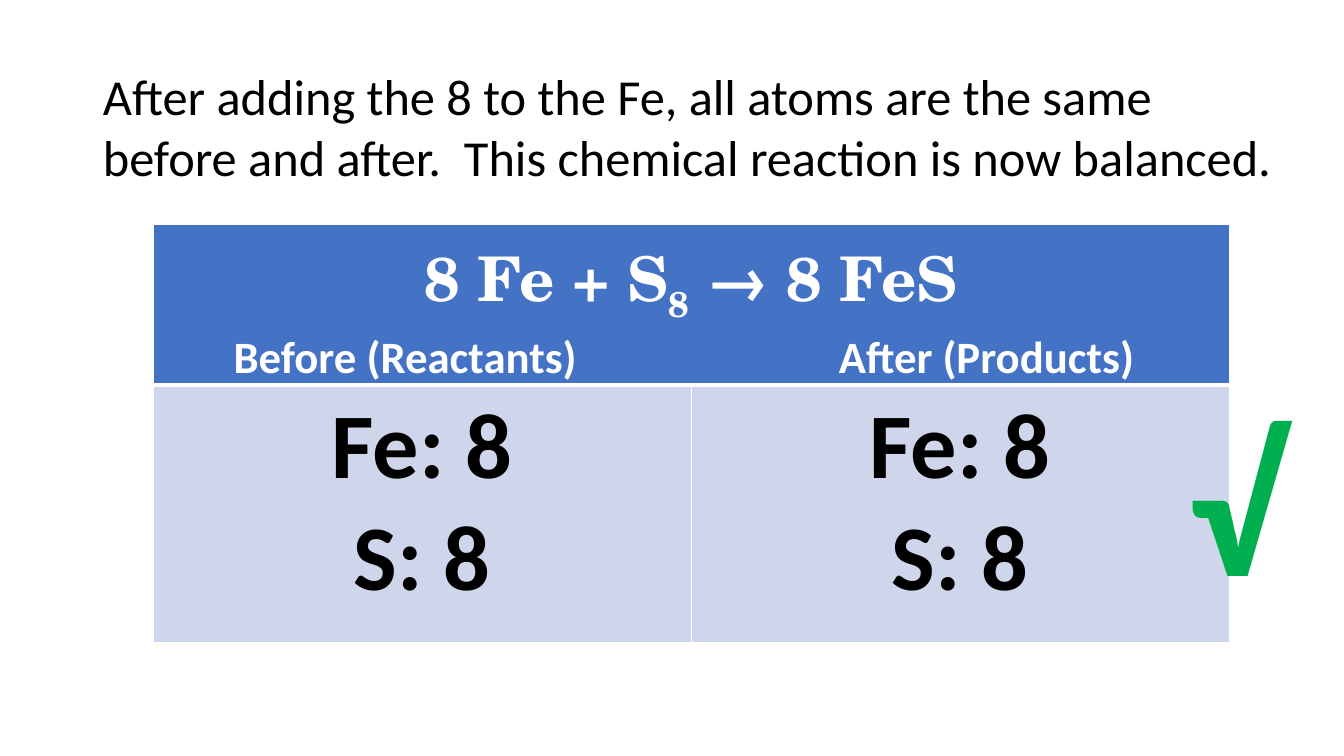
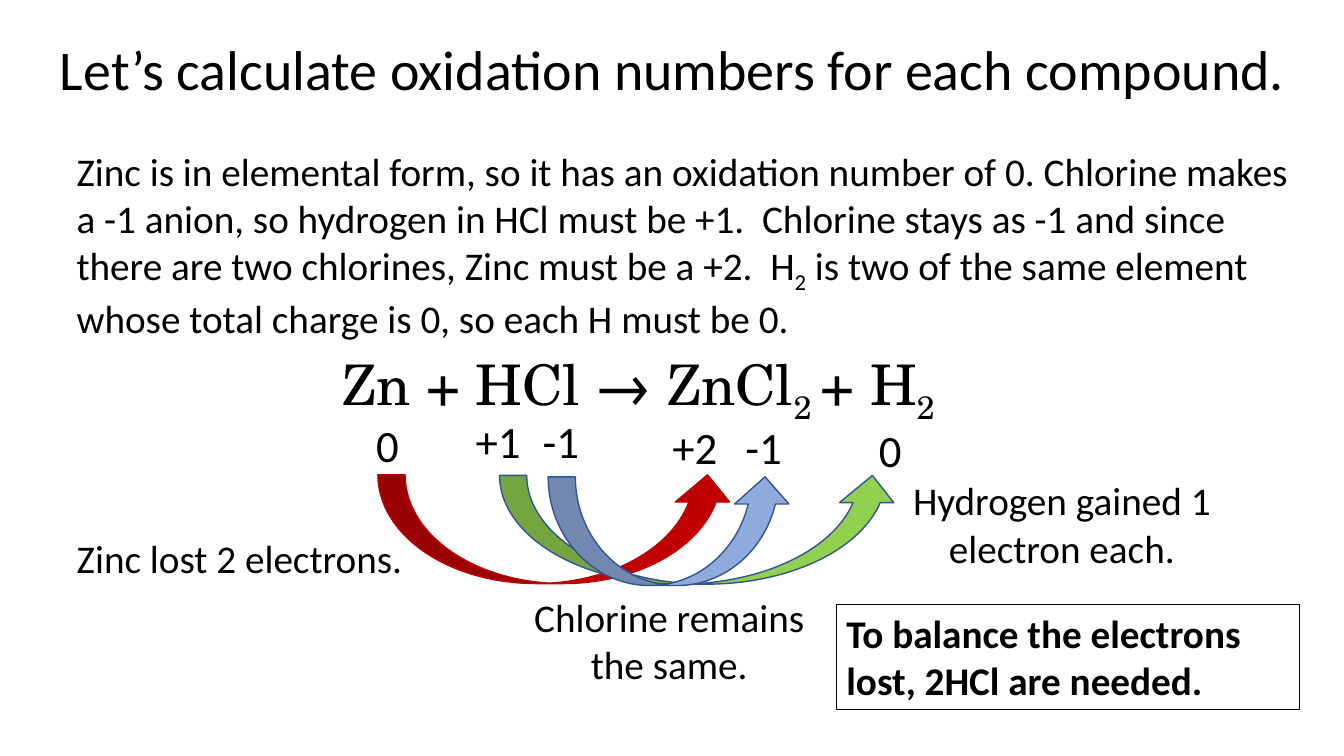
"""Build two chemistry slides on balancing a reaction and oxidation numbers."""
from dataclasses import dataclass
from typing import Any

import lxml.etree
import pptx
import pptx.dml.color
import pptx.enum.shapes
import pptx.enum.text
import pptx.oxml.ns
import pptx.util

Cm = pptx.util.Cm
Pt = pptx.util.Pt
ALIGN = pptx.enum.text.PP_ALIGN
SHAPES = pptx.enum.shapes.MSO_SHAPE

BODY_FONT = "Calibri"
FORMULA_FONT = "TeX Gyre Schola"
BLACK = "000000"
WHITE = "FFFFFF"
HEADER_BLUE = "4472C4"
CELL_BLUE = "CFD5EA"
CHECK_GREEN = "00B050"
ARROW_OUTLINE = "325491"
TITLE_ONLY_LAYOUT = 5


@dataclass(frozen=True)
class Box:
    """A frame in centimetres."""
    left: float
    top: float
    width: float
    height: float

    def lengths(self) -> tuple:
        """Return the frame as lengths."""
        return Cm(self.left), Cm(self.top), Cm(self.width), Cm(self.height)


@dataclass(frozen=True)
class TextStyle:
    """The look of a text."""
    size: float
    align: Any = ALIGN.CENTER
    color: str = BLACK
    font: str = BODY_FONT
    bold: bool = False
    wrap: bool = True


@dataclass(frozen=True)
class Label:
    """A text box whose subscripts stand between bars."""
    text: str
    box: Box
    style: TextStyle


@dataclass(frozen=True)
class TransferArrow:
    """A curved arrow between two oxidation numbers."""
    box: Box
    fill: str
    outline: str


NUMBER = TextStyle(32, wrap=False)
NOTE = TextStyle(28)
NOTE_LINE = TextStyle(28, wrap=False)
PROSE = TextStyle(28, ALIGN.LEFT)
NUMBER_HEIGHT = 1.63

OXIDATION_LABELS = (
    Label("Zn + HCl → ZnCl|2 |+ H|2", Box(7.62, 8.69, 16.94, 2), TextStyle(40, font=FORMULA_FONT)),
    Label("Zinc is in elemental form, so it has an oxidation number of 0. Chlorine makes a -1 anion, "
          "so hydrogen in HCl must be +1.  Chlorine stays as -1 and since there are two chlorines, "
          "Zinc must be a +2.  H|2| is two of the same element whose total charge is 0, "
          "so each H must be 0.", Box(1.68, 3.58, 31.7, 5.05), PROSE),
    Label("0", Box(9.22, 10.41, 1.09, NUMBER_HEIGHT), NUMBER),
    Label("+1", Box(11.73, 10.31, 1.65, NUMBER_HEIGHT), NUMBER),
    Label("-1", Box(13.41, 10.31, 1.45, NUMBER_HEIGHT), NUMBER),
    Label("+2", Box(16.69, 10.46, 1.65, NUMBER_HEIGHT), NUMBER),
    Label("-1", Box(18.52, 10.44, 1.45, NUMBER_HEIGHT), NUMBER),
    Label("0", Box(21.89, 10.52, 1.09, NUMBER_HEIGHT), NUMBER),
    Label("Zinc lost 2 electrons.", Box(1.63, 13.34, 8.81, 1.45), NOTE_LINE),
    Label("Hydrogen gained 1 electron each.", Box(22.25, 11.89, 9.02, 2.64), NOTE),
    Label("Chlorine remains the same.", Box(13.13, 14.83, 7.47, 2.64), NOTE),
)

TRANSFER_ARROWS = (
    TransferArrow(Box(12.65, 8.84, 2.74, 8.99), "C00000", "C00000"),
    TransferArrow(Box(16.26, 8.31, 2.74, 10.08), "92D050", ARROW_OUTLINE),
    TransferArrow(Box(15.52, 10.31, 2.74, 6.15), "8FAADC", ARROW_OUTLINE),
)


def rgb(color: str) -> pptx.dml.color.RGBColor:
    """Turn a hex string into a colour."""
    return pptx.dml.color.RGBColor.from_string(color)


def write_paragraph(paragraph: Any, text: str, style: TextStyle) -> None:
    """Write a paragraph, lowering the parts between bars."""
    paragraph.alignment = style.align
    for index, part in enumerate(text.split("|")):
        run = paragraph.add_run()
        run.text = part
        run.font.name = style.font
        run.font.size = Pt(style.size)
        run.font.bold = style.bold
        run.font.color.rgb = rgb(style.color)
        if index % 2:
            run.font._element.set("baseline", "-25000")


def write_frame(shape: Any, text: str, style: TextStyle) -> None:
    """Write one paragraph into a shape that grows with its text."""
    text_frame = shape.text_frame
    text_frame.word_wrap = style.wrap
    text_frame.auto_size = pptx.enum.text.MSO_AUTO_SIZE.SHAPE_TO_FIT_TEXT
    text_frame.vertical_anchor = pptx.enum.text.MSO_ANCHOR.TOP
    write_paragraph(text_frame.paragraphs[0], text, style)


def add_titled_slide(presentation: Any, title: Label) -> Any:
    """Add a slide with a placed title."""
    slide = presentation.slides.add_slide(presentation.slide_layouts[TITLE_ONLY_LAYOUT])
    shape = slide.shapes.title
    shape.left, shape.top, shape.width, shape.height = title.box.lengths()
    write_frame(shape, title.text, title.style)
    return slide


def add_label(slide: Any, label: Label) -> None:
    """Add a text box."""
    write_frame(slide.shapes.add_textbox(*label.box.lengths()), label.text, label.style)


def add_transfer_arrow(slide: Any, arrow: TransferArrow) -> None:
    """Add a curved arrow that swings below the formula."""
    shape = slide.shapes.add_shape(SHAPES.CURVED_RIGHT_ARROW, *arrow.box.lengths())
    shape.rotation = 270
    shape.shadow.inherit = False
    shape.fill.solid()
    shape.fill.fore_color.rgb = rgb(arrow.fill)
    shape.line.color.rgb = rgb(arrow.outline)
    shape.line.width = Pt(1)


def add_framed_note(slide: Any, note: Label) -> None:
    """Add a note inside a thin black frame."""
    shape = slide.shapes.add_shape(SHAPES.RECTANGLE, *note.box.lengths())
    shape.shadow.inherit = False
    shape.fill.background()
    shape.line.color.rgb = rgb(BLACK)
    shape.line.width = Pt(0.75)
    write_frame(shape, note.text, note.style)


def add_child(parent: Any, tag: str, **attributes: str) -> Any:
    """Append a drawing element to a parent."""
    return lxml.etree.SubElement(parent, pptx.oxml.ns.qn(tag), **attributes)


def format_cell(cell: Any, fill: str, top_width: float, bottom_width: float) -> None:
    """Give a cell white borders and a fill."""
    properties = cell._tc.get_or_add_tcPr()
    for side, width in (("L", 1), ("R", 1), ("T", top_width), ("B", bottom_width)):
        border = add_child(properties, f"a:ln{side}", w=str(Pt(width)))
        add_child(add_child(border, "a:solidFill"), "a:srgbClr", val=WHITE)
    cell.fill.solid()
    cell.fill.fore_color.rgb = rgb(fill)


def add_center_tabs(paragraph: Any, positions: tuple) -> None:
    """Set centred tab stops at positions in centimetres."""
    tab_list = add_child(paragraph._p.get_or_add_pPr(), "a:tabLst")
    for position in positions:
        add_child(tab_list, "a:tab", pos=str(Cm(position)), algn="ctr")


def add_atom_table(slide: Any) -> None:
    """Add the table that counts atoms before and after."""
    box = Box(3.86, 5.66, 27.12, 10.54)
    table = slide.shapes.add_table(2, 2, *box.lengths()).table
    for row, height in zip(table.rows, (4.04, 6.5)):
        row.height = Cm(height)
    header = table.cell(0, 0)
    header.merge(table.cell(0, 1))
    for column in range(2):
        format_cell(table.cell(0, column), HEADER_BLUE, 1, 3)
        count = table.cell(1, column)
        format_cell(count, CELL_BLUE, 3, 1)
        count_style = TextStyle(66, bold=True)
        write_paragraph(count.text_frame.paragraphs[0], "Fe: 8", count_style)
        write_paragraph(count.text_frame.add_paragraph(), "S: 8", count_style)
    formula_style = TextStyle(44, color=WHITE, font=FORMULA_FONT, bold=True)
    write_paragraph(header.text_frame.paragraphs[0], "8 Fe + S|8| → 8 FeS", formula_style)
    sides = header.text_frame.add_paragraph()
    write_paragraph(sides, "\tBefore (Reactants)\tAfter (Products)",
                    TextStyle(32, ALIGN.LEFT, WHITE, bold=True))
    add_center_tabs(sides, (6.1, 20.75))


def build_balanced_slide(presentation: Any) -> None:
    """Build the slide with the balanced reaction."""
    slide = add_titled_slide(presentation, Label(
        "After adding the 8 to the Fe, all atoms are the same before and after.  "
        "This chemical reaction is now balanced.",
        Box(2.34, 1.52, 30.3, 3.33), TextStyle(36, ALIGN.LEFT)))
    add_atom_table(slide)
    add_label(slide, Label("√", Box(29.67, 9.53, 2.97, 6.15),
                           TextStyle(138, color=CHECK_GREEN, bold=True, wrap=False)))


def build_oxidation_slide(presentation: Any) -> None:
    """Build the slide with the oxidation numbers."""
    slide = add_titled_slide(presentation, Label(
        "Let’s calculate oxidation numbers for each compound.",
        Box(1.09, 0.74, 31.7, 1.96), TextStyle(40, wrap=False)))
    for label in OXIDATION_LABELS:
        add_label(slide, label)
    for arrow in TRANSFER_ARROWS:
        add_transfer_arrow(slide, arrow)
    add_framed_note(slide, Label("To balance the electrons lost, 2HCl are needed.",
                                 Box(21.08, 15.24, 11.68, 2.64),
                                 TextStyle(28, ALIGN.LEFT, bold=True)))


def main() -> None:
    """Build and save the presentation."""
    presentation = pptx.Presentation()
    presentation.slide_width = Cm(33.87)
    presentation.slide_height = Cm(19.05)
    build_balanced_slide(presentation)
    build_oxidation_slide(presentation)
    presentation.save("out.pptx")


if __name__ == "__main__":
    main()
